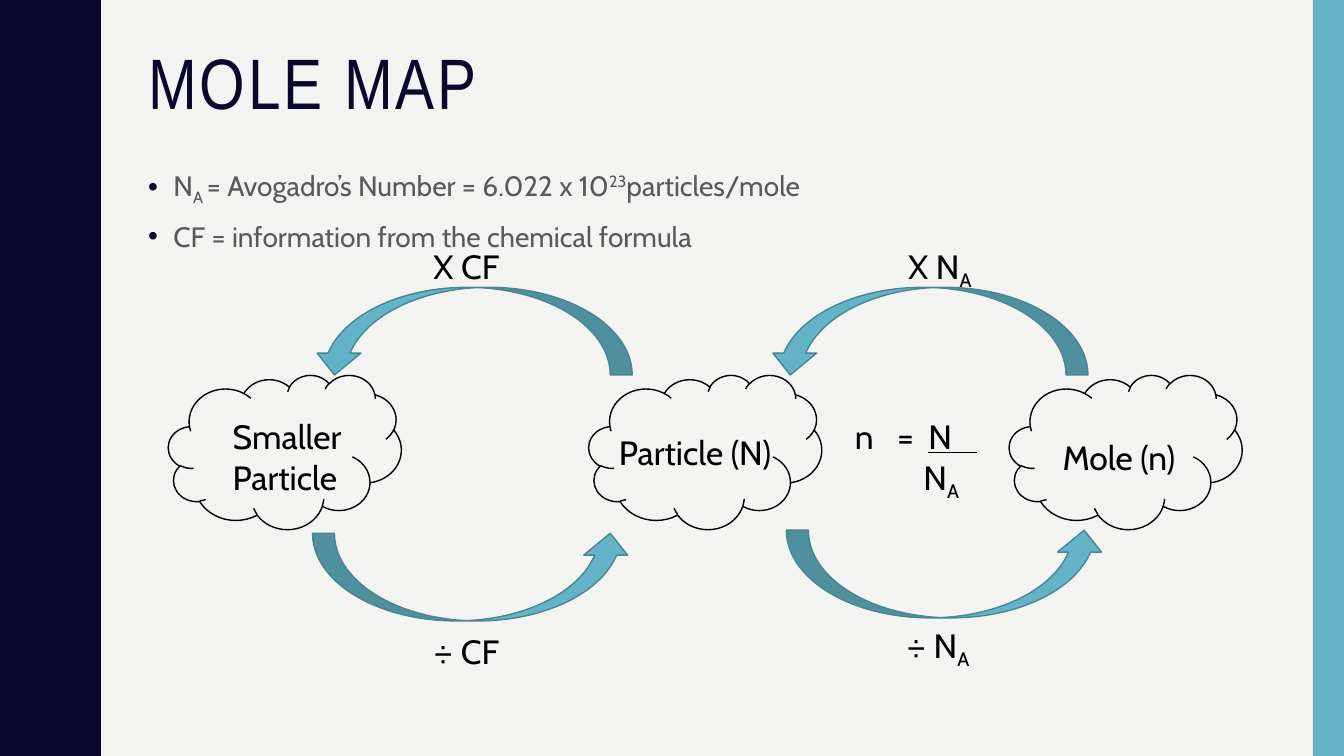
from pptx import Presentation
from pptx import util as u
from pptx.dml.color import RGBColor
from pptx.enum import shapes, text
from pptx.oxml import ns, xmlchemy

NAVY = RGBColor(0x0B, 0x08, 0x2E)
TEAL = RGBColor(0x62, 0xB4, 0xC6)
DARK_TEAL = RGBColor(0x49, 0x85, 0x92)
PAPER = RGBColor(0xF3, 0xF3, 0xF2)
GREY = RGBColor(0x59, 0x59, 0x59)
BLACK = RGBColor(0, 0, 0)

WIDTH, HEIGHT = 13.33, 7.5
SUB, SUPER = -25, 30  # baseline shift in percent
SHAPE = shapes.MSO_SHAPE

# Half of one wave of the left border; the other half mirrors it
HALF_WAVE = [(0.78, 0), (0.78, 0.07), (0.79, 0.14), (0.8, 0.2), (0.81, 0.25),
             (0.83, 0.29), (0.85, 0.33), (0.87, 0.38), (0.89, 0.42),
             (0.91, 0.46), (0.93, 0.5), (0.95, 0.55), (0.96, 0.61),
             (0.97, 0.68), (0.97, 0.75)]
WAVE_COUNT = 5


def inches(*lengths):
    return [u.Inches(length) for length in lengths]


def add_element(parent, tag, **attributes):
    child = xmlchemy.OxmlElement(tag)
    for name, value in attributes.items():
        child.set(name, str(value))
    parent.append(child)
    return child


def add_run(para, words, size, color, font="Cabin", baseline=0):
    span = para.add_run()
    span.text = words
    span.font.size = u.Pt(size)
    span.font.name = font
    span.font.color.rgb = color
    properties = span._r.get_or_add_rPr()
    if baseline:
        properties.set("baseline", str(baseline * 1000))
    return properties


def paint(shape, fill=None, line=None):
    shape.shadow.inherit = False
    if fill is None:
        shape.fill.background()
    else:
        shape.fill.solid()
        shape.fill.fore_color.rgb = fill
    if line is None:
        shape.line.fill.background()
    else:
        shape.line.color.rgb = line
        shape.line.width = u.Pt(1)


def add_borders(page):
    """Wavy band on the left, plain band on the right."""
    wave = HALF_WAVE + [(x, 1.5 - y) for x, y in HALF_WAVE[-2::-1]]
    edge = [(x, y + 1.5 * turn) for turn in range(WAVE_COUNT) for x, y in wave]
    builder = page.shapes.build_freeform(0, 0, scale=u.Inches(1))
    builder.add_line_segments(edge + [(0, HEIGHT)], close=True)
    paint(builder.convert_to_shape(), NAVY)
    band = page.shapes.add_shape(SHAPE.RECTANGLE,
                                 *inches(13.02, 0, WIDTH - 13.02, HEIGHT))
    paint(band, TEAL)


def prepare_placeholder(holder, box):
    holder.left, holder.top, holder.width, holder.height = inches(*box)
    frame = holder.text_frame
    frame.vertical_anchor = text.MSO_ANCHOR.TOP
    frame.auto_size = text.MSO_AUTO_SIZE.NONE
    frame.word_wrap = True
    return frame


def fill_title(page, box):
    para = prepare_placeholder(page.shapes.title, box).paragraphs[0]
    para.alignment = text.PP_ALIGN.LEFT
    para.line_spacing = 0.9
    add_run(para, "MOLE MAP", 51, NAVY, "Arial Narrow").set("spc", "200")


def fill_definitions(page, box):
    frame = prepare_placeholder(page.placeholders[1], box)
    lines = [
        [("N", 0), ("A ", SUB), ("= Avogadro’s Number = 6.022 x 10", 0),
         ("23", SUPER), ("particles/mole", 0)],
        [("CF = information from the chemical formula", 0)],
    ]
    for number, line in enumerate(lines):
        para = frame.add_paragraph() if number else frame.paragraphs[0]
        para.line_spacing = 1.1
        para.space_before = u.Pt(7)
        properties = para._p.get_or_add_pPr()
        properties.set("marL", str(u.Inches(0.25)))
        properties.set("indent", str(-u.Inches(0.25)))
        bullet_color = add_element(properties, "a:buClr")
        add_element(bullet_color, "a:srgbClr", val=NAVY)
        add_element(properties, "a:buFont", typeface="Arial")
        add_element(properties, "a:buChar", char="•")
        for words, baseline in line:
            add_run(para, words, 20, GREY, baseline=baseline)


def add_label(page, box, *spans):
    frame = page.shapes.add_textbox(*inches(*box)).text_frame
    frame.word_wrap = True
    for words, baseline in spans:
        add_run(frame.paragraphs[0], words, 24, BLACK, baseline=baseline)
    return frame


def add_formula(page, left, top):
    """n = N over N_A, aligned with tab stops and an indent."""
    frame = add_label(page, (left, top, 1.65, 0.91), ("n\t=\tN", 0))
    tabs = add_element(frame.paragraphs[0]._p.get_or_add_pPr(), "a:tabLst")
    for stop in (0.42, 0.73):
        add_element(tabs, "a:tab", pos=u.Inches(stop), algn="l")
    divisor = frame.add_paragraph()
    divisor._p.get_or_add_pPr().set("marL", str(u.Inches(0.68)))
    add_run(divisor, "N", 24, BLACK)
    add_run(divisor, "A", 24, BLACK, baseline=SUB)
    bar = page.shapes.add_connector(
        shapes.MSO_CONNECTOR.STRAIGHT,
        *inches(left + 0.82, top + 0.41, left + 1.31, top + 0.41))
    bar.line.color.rgb = BLACK
    bar.line.width = u.Pt(0.5)
    add_element(bar._element.find(ns.qn("p:spPr")), "a:effectLst")


def add_map(page, left, top):
    """Three clouds, the labels around them and the arrows between them."""
    pitch = 4.17
    for column in range(3):
        cloud = page.shapes.add_shape(
            SHAPE.CLOUD, *inches(left + column * pitch, top + 1.33, 2.31, 1.53))
        paint(cloud, line=BLACK)

    labels = [
        (0.54, 1.69, 1.35, 0.91, [("Smaller Particle", 0)]),
        (4.37, 1.85, 1.91, 0.5, [("Particle (N)", 0)]),
        (8.77, 1.9, 1.36, 0.5, [("Mole (n)", 0)]),
        (2.53, 0, 0.98, 0.5, [("X CF", 0)]),
        (7.24, 0, 0.96, 0.5, [("X N", 0), ("A", SUB)]),
        (2.53, 3.82, 0.98, 0.5, [("÷ CF", 0)]),
        (7.22, 3.76, 0.98, 0.5, [("÷ N", 0), ("A", SUB)]),
    ]
    for x, y, width, height, spans in labels:
        add_label(page, (left + x, top + y, width, height), *spans)
    add_formula(page, left + 6.71, top + 1.69)

    # The upper arrows are the lower ones turned half round
    arrows = [(1.43, 2.9, 0), (5.95, 0.46, 180), (1.43, 0.46, 180), (6.13, 2.87, 0)]
    for x, y, turn in arrows:
        arrow = page.shapes.add_shape(SHAPE.CURVED_UP_ARROW,
                                      *inches(left + x, top + y, 3.17, 0.87))
        arrow.rotation = turn
        paint(arrow, TEAL, DARK_TEAL)


def main():
    deck = Presentation()
    deck.slide_width, deck.slide_height = inches(WIDTH, HEIGHT)
    page = deck.slides.add_slide(deck.slide_layouts[1])
    page.background.fill.solid()
    page.background.fill.fore_color.rgb = PAPER
    add_borders(page)
    fill_title(page, (1.37, 0.42, 11.13, 1.63))
    fill_definitions(page, (1.37, 1.58, 11.13, 5.4))
    add_map(page, 1.67, 2.39)
    deck.save("out.pptx")


if __name__ == "__main__":
    main()
